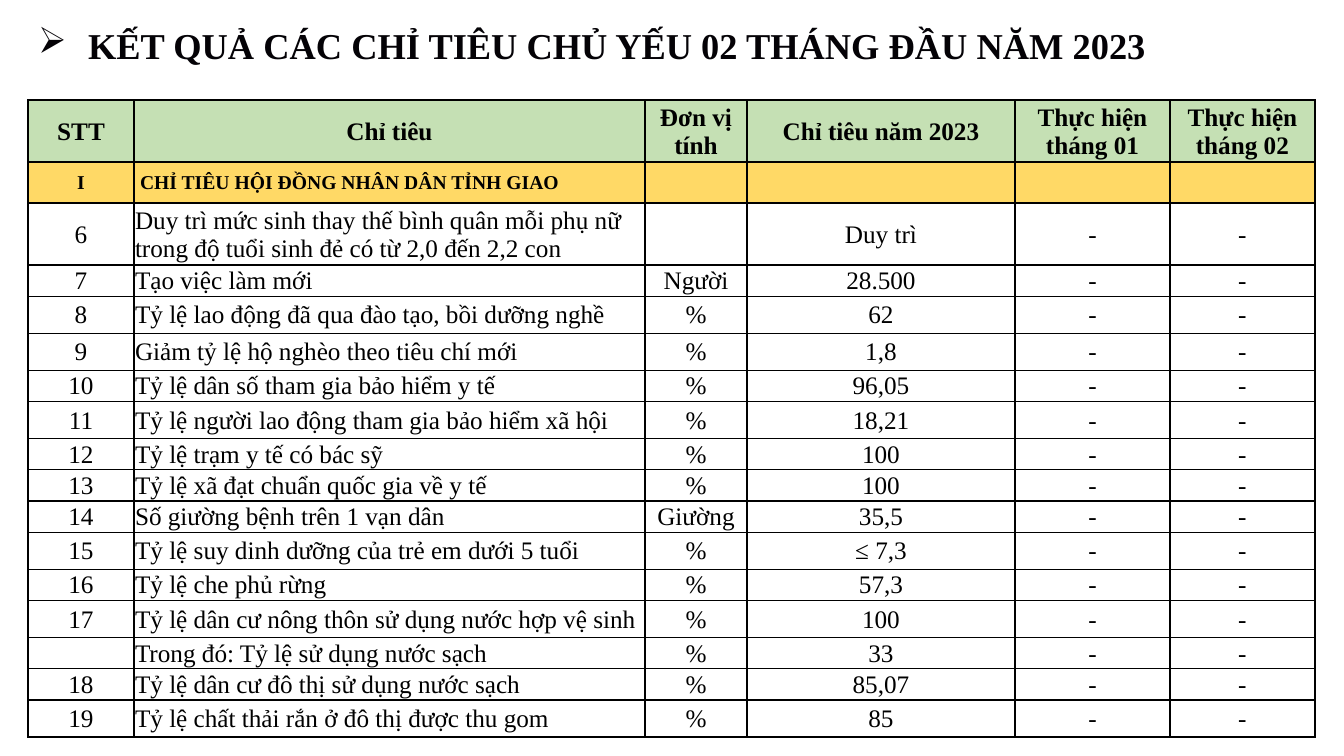
import lxml.etree
import pptx
import pptx.dml.color
import pptx.enum.text
import pptx.oxml.ns
import pptx.util

# Content
TITLE = "KẾT QUẢ CÁC CHỈ TIÊU CHỦ YẾU 02 THÁNG ĐẦU NĂM 2023"
HEADINGS = ("STT", "Chỉ tiêu", "Đơn vị tính", "Chỉ tiêu năm 2023",
            "Thực hiện tháng 01", "Thực hiện tháng 02")
SECTION = ("I", "CHỈ TIÊU HỘI ĐỒNG NHÂN DÂN TỈNH GIAO", "", "", "", "")
LOW, MEDIUM, SECTION_HEIGHT, TALL = 31, 37, 41, 62  # row heights, px
# Row height, number, indicator, unit, target for 2023
INDICATORS = [
    (TALL, "6", "Duy trì mức sinh thay thế bình quân mỗi phụ nữ "
     "trong độ tuổi sinh đẻ có từ 2,0 đến 2,2 con", "", "Duy trì"),
    (LOW, "7", "Tạo việc làm mới", "Người", "28.500"),
    (MEDIUM, "8", "Tỷ lệ lao động đã qua đào tạo, bồi dưỡng nghề", "%", "62"),
    (MEDIUM, "9", "Giảm tỷ lệ hộ nghèo theo tiêu chí mới", "%", "1,8"),
    (LOW, "10", "Tỷ lệ dân số tham gia bảo hiểm y tế", "%", "96,05"),
    (MEDIUM, "11", "Tỷ lệ người lao động tham gia bảo hiểm xã hội", "%", "18,21"),
    (LOW, "12", "Tỷ lệ trạm y tế có bác sỹ", "%", "100"),
    (LOW, "13", "Tỷ lệ xã đạt chuẩn quốc gia về y tế", "%", "100"),
    (LOW, "14", "Số giường bệnh trên 1 vạn dân", "Giường", "35,5"),
    (MEDIUM, "15", "Tỷ lệ suy dinh dưỡng của trẻ em dưới 5 tuổi", "%", "≤ 7,3"),
    (LOW, "16", "Tỷ lệ che phủ rừng", "%", "57,3"),
    (MEDIUM, "17", "Tỷ lệ dân cư nông thôn sử dụng nước hợp vệ sinh", "%", "100"),
    (LOW, "", "Trong đó: Tỷ lệ sử dụng nước sạch", "%", "33"),
    (LOW, "18", "Tỷ lệ dân cư đô thị sử dụng nước sạch", "%", "85,07"),
    (MEDIUM, "19", "Tỷ lệ chất thải rắn ở đô thị được thu gom", "%", "85"),
]
NOT_REPORTED = ("-", "-")  # months 01 and 02

FONT = "Times New Roman"
BLACK = pptx.dml.color.RGBColor(0x00, 0x00, 0x00)
TITLE_INK = pptx.dml.color.RGBColor(0x04, 0x02, 0x06)
GREEN = pptx.dml.color.RGBColor(0xC5, 0xE0, 0xB4)
YELLOW = pptx.dml.color.RGBColor(0xFF, 0xD9, 0x66)

# Layout in px
SLIDE_SIZE = (1344, 756)
TITLE_BOX = (28, 18, 1288, 54)
TITLE_INDENT = 50
TABLE_LEFT, TABLE_TOP = 28, 100
COLUMN_WIDTHS = (106, 511, 102, 268, 155, 145)
INDICATOR_COLUMN = 1
SECTION_MARGIN = 6


def px(length):
    return pptx.util.Emu(round(length * 914400 / 100.8))


def set_font(font, size, color, bold):
    font.name, font.size, font.bold = FONT, pptx.util.Pt(size), bold
    font.color.rgb = color


def add_child(parent, tag, **attributes):
    return lxml.etree.SubElement(parent, pptx.oxml.ns.qn(tag), attributes)


def add_borders(cell):
    properties = cell._tc.get_or_add_tcPr()
    for side in ("a:lnL", "a:lnR", "a:lnT", "a:lnB"):
        line = add_child(properties, side, w=str(pptx.util.Pt(1)))
        add_child(add_child(line, "a:solidFill"), "a:srgbClr", val=str(BLACK))


def fill_cell(cell, text, size, bold, fill, centred):
    add_borders(cell)
    if fill is None:
        cell.fill.background()
    else:
        cell.fill.solid()
        cell.fill.fore_color.rgb = fill
    cell.margin_left = cell.margin_right = cell.margin_top = px(1)
    cell.margin_bottom = 0
    cell.vertical_anchor = pptx.enum.text.MSO_ANCHOR.MIDDLE
    cell.text = text
    paragraph = cell.text_frame.paragraphs[0]
    align = pptx.enum.text.PP_ALIGN
    paragraph.alignment = align.CENTER if centred else align.LEFT
    set_font(paragraph.font, size, BLACK, bold)


def add_title(slide):
    title = slide.shapes.title
    title.left, title.top, title.width, title.height = map(px, TITLE_BOX)
    frame = title.text_frame
    frame.text = TITLE
    frame.word_wrap = True
    frame.auto_size = pptx.enum.text.MSO_AUTO_SIZE.SHAPE_TO_FIT_TEXT
    frame.vertical_anchor = pptx.enum.text.MSO_ANCHOR.TOP
    paragraph = frame.paragraphs[0]
    paragraph.alignment = pptx.enum.text.PP_ALIGN.LEFT
    properties = paragraph._p.get_or_add_pPr()
    properties.set("marL", str(px(TITLE_INDENT)))
    properties.set("indent", str(-px(TITLE_INDENT)))
    add_child(properties, "a:buChar", char="➢")
    set_font(paragraph.font, 26, TITLE_INK, True)


def add_indicator_table(slide):
    # Each row: height, texts, text size, bold, fill
    rows = [(TALL, HEADINGS, 18, True, GREEN),
            (SECTION_HEIGHT, SECTION, 14, True, YELLOW)]
    rows += [(height, (*texts, *NOT_REPORTED), 18, False, None)
             for height, *texts in INDICATORS]
    table = slide.shapes.add_table(
        len(rows), len(COLUMN_WIDTHS), px(TABLE_LEFT), px(TABLE_TOP),
        px(sum(COLUMN_WIDTHS)), px(sum(row[0] for row in rows))).table
    table.first_row = table.horz_banding = False
    for column, width in zip(table.columns, COLUMN_WIDTHS):
        column.width = px(width)
    for r, (height, texts, size, bold, fill) in enumerate(rows):
        table.rows[r].height = px(height)
        for c, text in enumerate(texts):
            centred = r == 0 or c != INDICATOR_COLUMN
            fill_cell(table.cell(r, c), text, size, bold, fill, centred)
    table.cell(1, INDICATOR_COLUMN).margin_left = px(SECTION_MARGIN)


def main():
    deck = pptx.Presentation()
    deck.slide_width, deck.slide_height = map(px, SLIDE_SIZE)
    slide = deck.slides.add_slide(deck.slide_layouts[5])  # title only
    add_title(slide)
    add_indicator_table(slide)
    deck.save("out.pptx")


if __name__ == "__main__":
    main()
